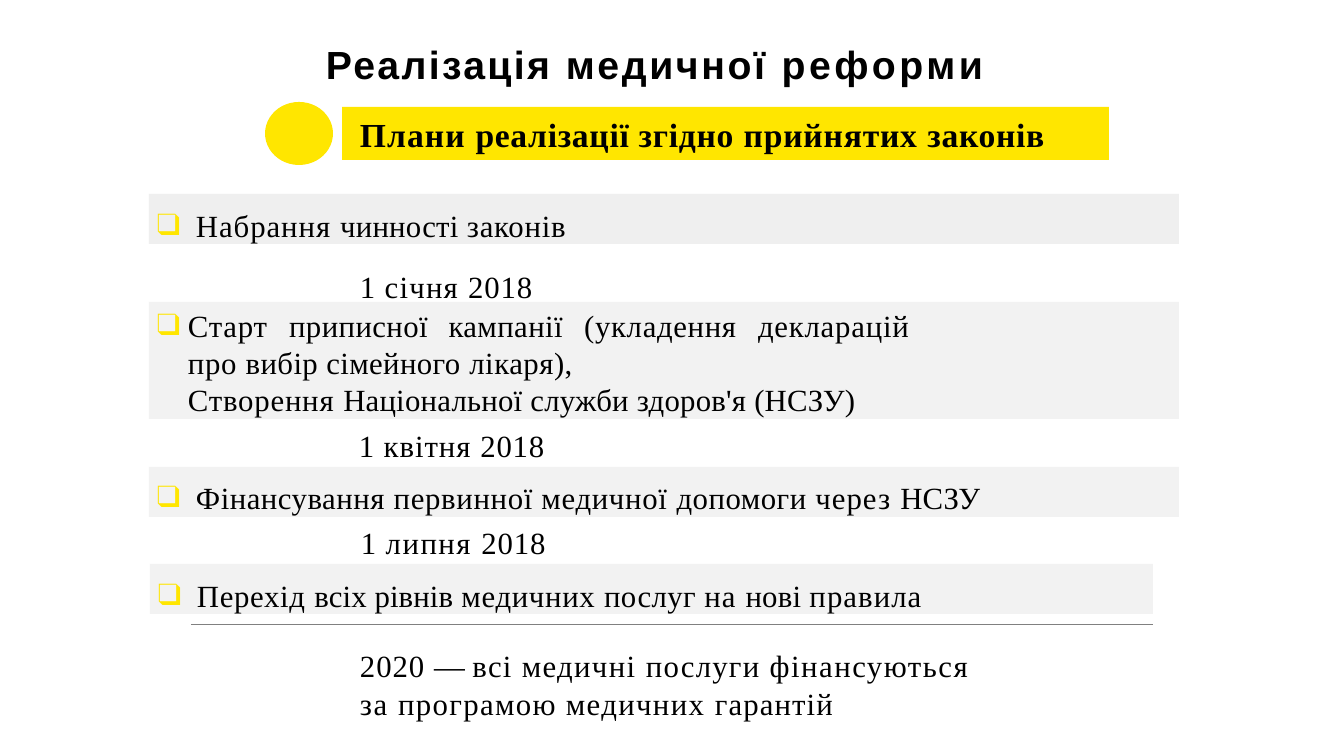
"""Build the slide on the stages of the medical reform."""
from lxml import etree
from pptx import Presentation
from pptx.dml.color import RGBColor
from pptx.enum.shapes import MSO_CONNECTOR, MSO_SHAPE
from pptx.enum.text import MSO_ANCHOR, MSO_AUTO_SIZE, PP_ALIGN
from pptx.oxml.ns import qn
from pptx.util import Emu, Pt

RECTANGLE, OVAL = MSO_SHAPE.RECTANGLE, MSO_SHAPE.OVAL
STRAIGHT = MSO_CONNECTOR.STRAIGHT
TOP, MIDDLE = MSO_ANCHOR.TOP, MSO_ANCHOR.MIDDLE
LEFT, CENTER, JUSTIFY = PP_ALIGN.LEFT, PP_ALIGN.CENTER, PP_ALIGN.JUSTIFY
NO_AUTOFIT = MSO_AUTO_SIZE.NONE

COLORS = {"text": "000000", "accent": "FFE600", "first band": "EFEFEF",
          "band": "F2F2F2", "rule": "808080"}
SERIF = "Times New Roman"


def px(*lengths):
    return [Emu(round(length * 914400 / 100.8)) for length in lengths]


def write(shape, paragraphs, font=SERIF, size=22, bold=False, align=LEFT,
          anchor=TOP, insets=(0, 1, 0, 0), bullet_at=None, text_at=1, before=0):
    frame = shape.text_frame
    frame.word_wrap = True
    frame.auto_size = NO_AUTOFIT
    frame.vertical_anchor = anchor
    (frame.margin_left, frame.margin_top,
     frame.margin_right, frame.margin_bottom) = px(*insets)
    for index, spans in enumerate(paragraphs):
        para = frame.paragraphs[0] if index == 0 else frame.add_paragraph()
        para.alignment = align
        para.space_before = Pt(before)
        properties = para._p.get_or_add_pPr()
        bulleted = bullet_at is not None and index == 0
        indent = bullet_at - text_at if bulleted else 0
        properties.set("marL", str(px(text_at)[0]))
        properties.set("indent", str(px(indent)[0]))
        if bulleted:
            color = etree.SubElement(properties, qn("a:buClr"))
            etree.SubElement(color, qn("a:srgbClr"), val=COLORS["accent"])
            etree.SubElement(properties, qn("a:buFont"), typeface=SERIF)
            etree.SubElement(properties, qn("a:buChar"), char="❑")
        else:
            etree.SubElement(properties, qn("a:buNone"))
        for text, spacing in spans:
            span = para.add_run()
            span.text = text
            span.font.name = font
            span.font.size = Pt(size)
            span.font.bold = bold
            span.font.color.rgb = RGBColor.from_string(COLORS["text"])
            span._r.get_or_add_rPr().set("spc", str(round(spacing * 100)))


deck = Presentation()
deck.slide_width, deck.slide_height = px(1344, 756)
page = deck.slides.add_slide(deck.slide_layouts[5])

rule = page.shapes.add_connector(STRAIGHT, *px(191, 624, 1153, 624))
rule.line.color.rgb = RGBColor.from_string(COLORS["rule"])
rule.line.width = Pt(0.25)
etree.SubElement(rule._element.spPr, qn("a:effectLst"))

title = page.shapes.title
title.left, title.top, title.width, title.height = px(1, 33, 1289, 54)
write(title, [[("Реалізація ", 1.7), ("медичної ", 1.9), ("реформи", 2.6)]],
      font="Arial", size=28, bold=True, align=CENTER, anchor=MIDDLE,
      insets=(0, 7, 0, 0), text_at=18)

blocks = {}
for name, kind, color, place in [
    ("marker", OVAL, "accent", (265, 102, 68, 63)),
    ("heading", RECTANGLE, "accent", (342, 107, 767, 53)),
    ("law", RECTANGLE, "first band", (149, 194, 1030, 50)),
    ("campaign", RECTANGLE, "band", (149, 302, 1030, 117)),
    ("funding", RECTANGLE, "band", (149, 467, 1030, 50)),
    ("transition", RECTANGLE, "band", (150, 564, 1003, 50)),
]:
    block = page.shapes.add_shape(kind, *px(*place))
    block.shadow.inherit = False
    block.fill.solid()
    block.fill.fore_color.rgb = RGBColor.from_string(COLORS[color])
    block.line.fill.background()
    blocks[name] = block

write(blocks["heading"], [[("Плани ", 0.8), ("реалізації згідно ", 0.5),
                           ("прийнятих ", 0.6), ("законів", 0.5)]],
      size=24, bold=True, insets=(17, 7, 0, 0))

for name, top_inset, spans in [
    ("law", 13, [("Набрання ", 0.7), ("чинності ", 0.2), ("законів", 0.6)]),
    ("funding", 12, [("Фінансування ", 0.4), ("первинної медичної ", 0.5),
                     ("допомоги ", 0.4), ("через ", 0.8), ("НСЗУ", 0.2)]),
    ("transition", 13, [("Перехід ", 0.5), ("всіх рівнів ", 0.1),
                        ("медичних ", 0.5), ("послуг ", 0.3), ("на ", 0.8),
                        ("нові ", 0.2), ("правила", 0.8)]),
]:
    write(blocks[name], [spans], insets=(0, top_inset, 0, 0),
          bullet_at=8, text_at=47)

write(blocks["campaign"], [
    [("Старт ", 0.6), ("приписної кампанії ", 0.3), ("(укладення ", 0.5),
     ("декларацій ", 0.6), ("про ", 0.5), ("вибір сімейного ", 0.3),
     ("лікаря),", 0.4)],
    [("Створення ", 0.6), ("Національної служби здоров'я (НСЗУ)", 0.2)],
], align=JUSTIFY, insets=(0, 5, 269, 0), bullet_at=8, text_at=39)

for place, lines in [
    ((359, 267, 587, 38), [[("1 ", 0.6), ("січня ", 0.9), ("2018", 0.6)]]),
    ((358, 426, 592, 38), [[("1 ", 0.6), ("квітня ", 0.7), ("2018", 0.6)]]),
    ((360, 523, 588, 38), [[("1 ", 0.6), ("липня ", 1.1), ("2018", 0.6)]]),
    ((359, 646, 764, 78), [
        [("2020 ", 0.7), ("— ", 0), ("всі ", 0.9), ("медичні ", 1),
         ("послуги ", 0.9), ("фінансуються", 1.1)],
        [("за ", 1.1), ("програмою медичних ", 1), ("гарантій", 0.8)]]),
]:
    write(page.shapes.add_textbox(*px(*place)), lines, before=0.9)

deck.save("out.pptx")
